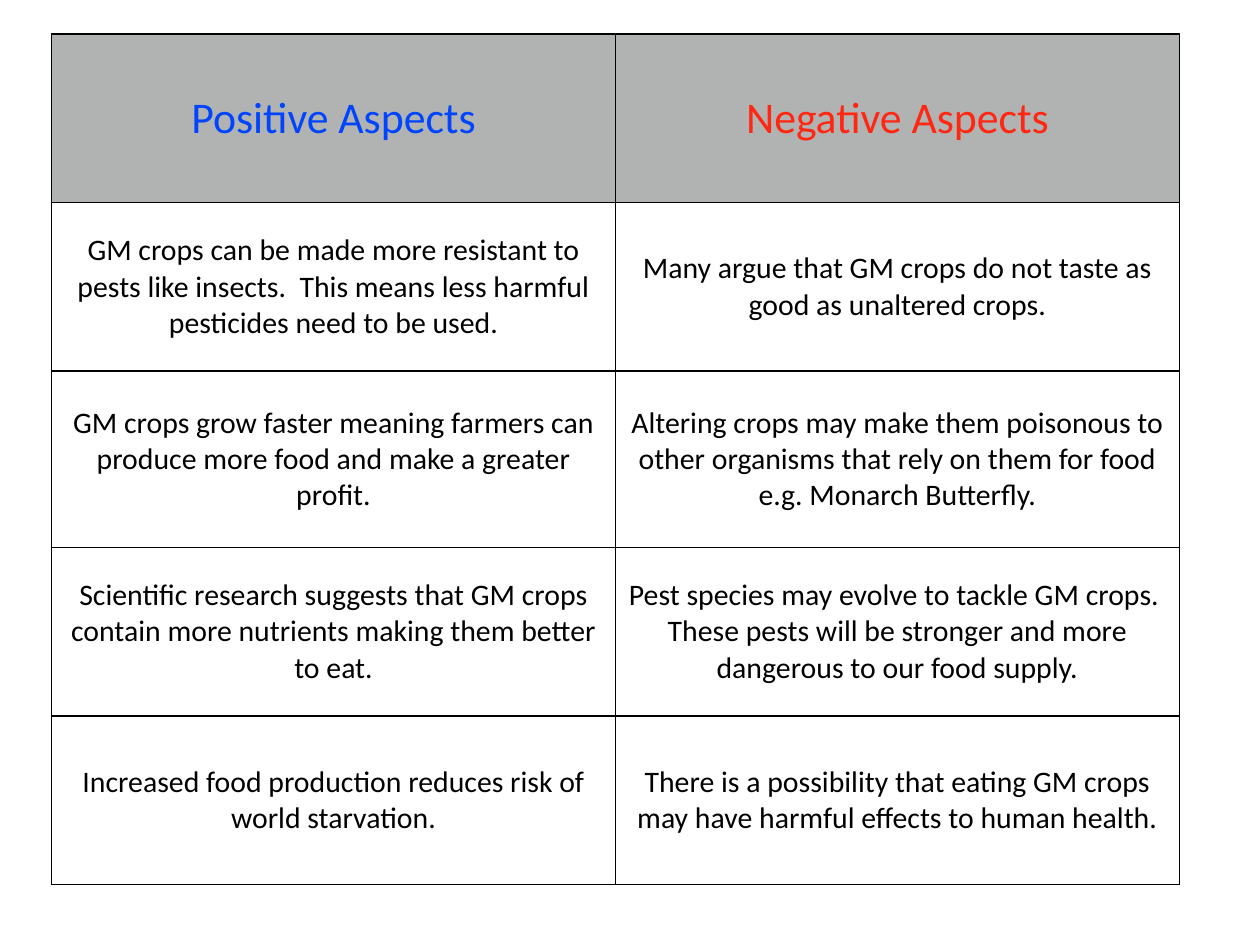
from dataclasses import dataclass

import pptx
import pptx.dml.color
import pptx.enum.text
import pptx.oxml.ns
import pptx.util
from lxml import etree

Inches = pptx.util.Inches
Pt = pptx.util.Pt


@dataclass(frozen=True)
class Theme:
    """Colours, type sizes and line widths of the slide."""
    font: str = "Calibri"
    header_size: int = 25
    body_size: int = 17
    border_width: int = 1
    positive: str = "0044FE"
    negative: str = "FF2712"
    text: str = "000000"
    border: str = "000000"
    header_fill: str = "B0B3B2"
    body_fill: str = "FFFFFF"


THEME = Theme()
HEADERS = [("Positive Aspects", THEME.positive), ("Negative Aspects", THEME.negative)]
ASPECTS = [
    ("GM crops can be made more resistant to pests like insects.  This means less harmful pesticides need to be used.",
     "Many argue that GM crops do not taste as good as unaltered crops."),
    ("GM crops grow faster meaning farmers can produce more food and make a greater profit.",
     "Altering crops may make them poisonous to other organisms that rely on them for food e.g. Monarch Butterfly."),
    ("Scientific research suggests that GM crops contain more nutrients making them better to eat.",
     "Pest species may evolve to tackle GM crops.  These pests will be stronger and more dangerous to our food supply."),
    ("Increased food production reduces risk of world starvation.",
     "There is a possibility that eating GM crops may have harmful effects to human health."),
]
ROW_HEIGHTS = [1.34, 1.34, 1.4, 1.34, 1.34]


def add_borders(cell):
    """Draw a solid line on all four sides of a cell."""
    qn = pptx.oxml.ns.qn
    properties = cell._tc.get_or_add_tcPr()
    for side in ("a:lnL", "a:lnR", "a:lnT", "a:lnB"):
        line = etree.SubElement(properties, qn(side), w=str(Pt(THEME.border_width)))
        fill = etree.SubElement(line, qn("a:solidFill"))
        etree.SubElement(fill, qn("a:srgbClr"), val=THEME.border)


def fill_cell(cell, text, size, color, fill):
    """Write centred text in a bordered, filled cell."""
    add_borders(cell)
    cell.fill.solid()
    cell.fill.fore_color.rgb = pptx.dml.color.RGBColor.from_string(fill)
    cell.margin_left = cell.margin_right = Inches(0.05)
    cell.margin_top = cell.margin_bottom = Inches(0.05)
    cell.vertical_anchor = pptx.enum.text.MSO_ANCHOR.MIDDLE
    cell.text = text
    paragraph = cell.text_frame.paragraphs[0]
    paragraph.alignment = pptx.enum.text.PP_ALIGN.CENTER
    paragraph.font.name = THEME.font
    paragraph.font.size = Pt(size)
    paragraph.font.bold = False
    paragraph.font.color.rgb = pptx.dml.color.RGBColor.from_string(color)


def add_aspects_table(slide, left, top, width, height):
    """Place the table of positive and negative aspects in the given box."""
    table = slide.shapes.add_table(len(ASPECTS) + 1, len(HEADERS), left, top, width, height).table
    table.horz_banding = False
    for row, row_height in zip(table.rows, ROW_HEIGHTS):
        row.height = int(height * row_height / sum(ROW_HEIGHTS))
    for column, (text, color) in enumerate(HEADERS):
        fill_cell(table.cell(0, column), text, THEME.header_size, color, THEME.header_fill)
    for row, aspects in enumerate(ASPECTS, start=1):
        for column, text in enumerate(aspects):
            fill_cell(table.cell(row, column), text, THEME.body_size, THEME.text, THEME.body_fill)


def main():
    """Build and save the presentation."""
    presentation = pptx.Presentation()
    presentation.slide_width = Inches(10)
    presentation.slide_height = Inches(7.5)
    slide = presentation.slides.add_slide(presentation.slide_layouts[6])
    add_aspects_table(slide, Inches(0.41), Inches(0.27), Inches(8.95), Inches(6.75))
    presentation.save("out.pptx")


if __name__ == "__main__":
    main()
